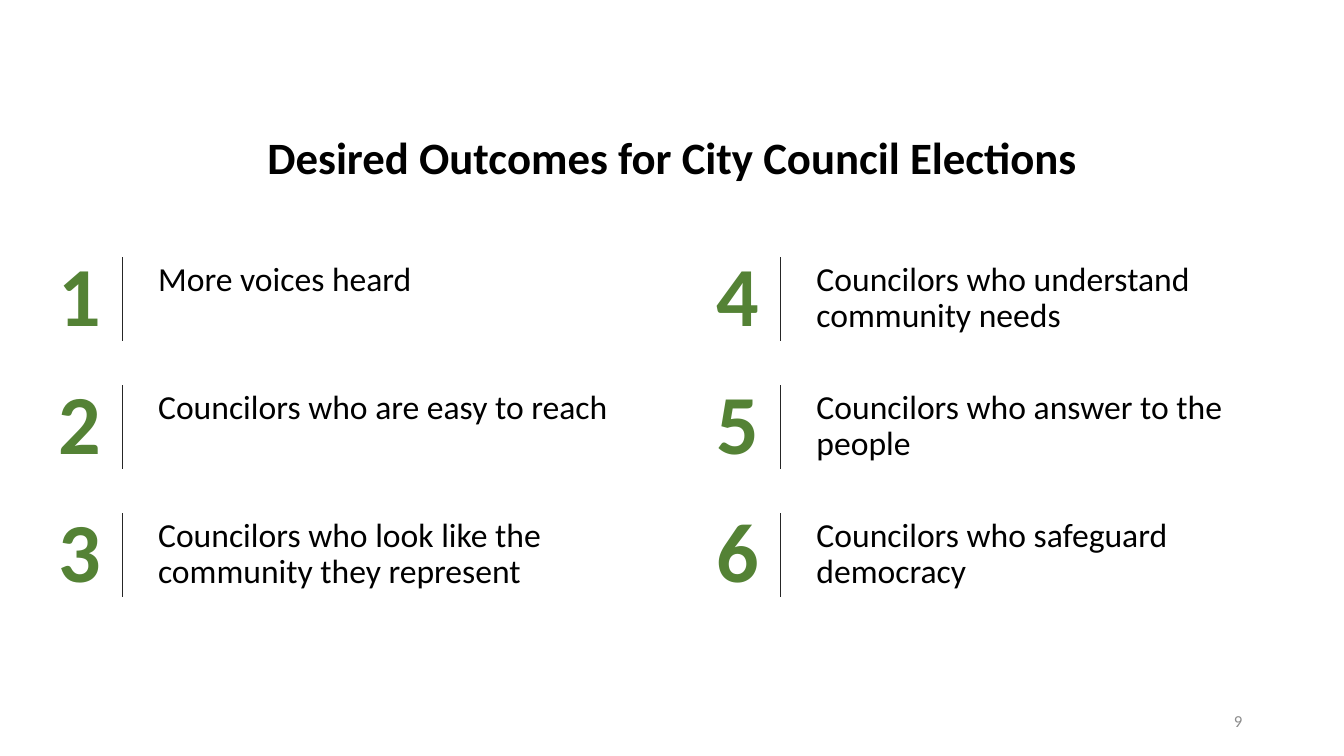
from dataclasses import dataclass

from lxml import etree
from pptx import Presentation, util as u
from pptx.dml.color import RGBColor
from pptx.enum import shapes, text
from pptx.oxml import ns

COLORS = {"text": "000000", "number": "548235", "rule": "262626", "page": "8C8C8C"}
FONT = "Calibri"

# Grid of outcomes, in inches
ROWS = 3
GRID_LEFT, GRID_TOP = 0.38, 2.55
COLUMN_STEP, ROW_STEP = 6.53, 1.27
NUMBER_WIDTH, NUMBER_HEIGHT = 0.82, 0.99
RULE_OFFSET, TEXT_OFFSET = 0.83, 1.09
TEXT_WIDTH, ROW_HEIGHT = 5, 0.83

OUTCOMES = [
    "More voices heard",
    "Councilors who are easy to reach",
    "Councilors who look like the community they represent",
    "Councilors who understand community needs",
    "Councilors who answer to the people",
    "Councilors who safeguard democracy",
]


@dataclass(frozen=True)
class Style:
    size: float
    color: str
    bold: bool = False
    align: text.PP_ALIGN = text.PP_ALIGN.LEFT
    line_spacing: float = 0.9
    space_before: float = 10
    anchor: text.MSO_ANCHOR = text.MSO_ANCHOR.TOP


TITLE = Style(32, "text", bold=True, align=text.PP_ALIGN.CENTER)
BODY = Style(24, "text")
NUMBER = Style(60, "number", bold=True, align=text.PP_ALIGN.CENTER,
               line_spacing=0.8, space_before=0)
PAGE = Style(12, "page", align=text.PP_ALIGN.RIGHT, line_spacing=1.0,
             space_before=0, anchor=text.MSO_ANCHOR.MIDDLE)


@dataclass(frozen=True)
class Outcome:
    index: int
    wording: str

    @property
    def left(self) -> float:
        return GRID_LEFT + self.index // ROWS * COLUMN_STEP

    @property
    def top(self) -> float:
        return GRID_TOP + self.index % ROWS * ROW_STEP


def add_text(slide, wording: str, left: float, top: float,
             width: float, height: float, style: Style) -> None:
    box = slide.shapes.add_textbox(*map(u.Inches, (left, top, width, height)))
    frame = box.text_frame
    frame.word_wrap = True
    frame.vertical_anchor = style.anchor
    paragraph = frame.paragraphs[0]
    paragraph.alignment = style.align
    paragraph.line_spacing = style.line_spacing
    paragraph.space_before = u.Pt(style.space_before)
    run = paragraph.add_run()
    run.text = wording
    run.font.name = FONT
    run.font.size = u.Pt(style.size)
    run.font.bold = style.bold
    run.font.color.rgb = RGBColor.from_string(COLORS[style.color])


def add_rule(slide, left: float, top: float, height: float) -> None:
    rule = slide.shapes.add_connector(
        shapes.MSO_CONNECTOR.STRAIGHT,
        *map(u.Inches, (left, top, left, top + height)))
    rule.line.width = u.Pt(0.25)
    rule.line.color.rgb = RGBColor.from_string(COLORS["rule"])
    etree.SubElement(rule._element.spPr, ns.qn("a:effectLst"))


def add_outcome(slide, outcome: Outcome) -> None:
    left, top = outcome.left, outcome.top
    add_text(slide, outcome.wording, left + TEXT_OFFSET, top,
             TEXT_WIDTH, ROW_HEIGHT, BODY)
    add_text(slide, str(outcome.index + 1), left, top,
             NUMBER_WIDTH, NUMBER_HEIGHT, NUMBER)
    add_rule(slide, left + RULE_OFFSET, top, ROW_HEIGHT)


def main() -> None:
    presentation = Presentation()
    presentation.slide_width = u.Inches(13.33)
    presentation.slide_height = u.Inches(7.5)
    slide = presentation.slides.add_slide(presentation.slide_layouts[6])

    # Title
    add_text(slide, "Desired Outcomes for City Council Elections",
             1.67, 1.3, 10, 0.63, TITLE)

    # Numbered outcomes, down each column in turn
    for index, wording in enumerate(OUTCOMES):
        add_outcome(slide, Outcome(index, wording))

    # Page number
    add_text(slide, "9", 9.42, 6.95, 3, 0.4, PAGE)

    presentation.save("out.pptx")


if __name__ == "__main__":
    main()
